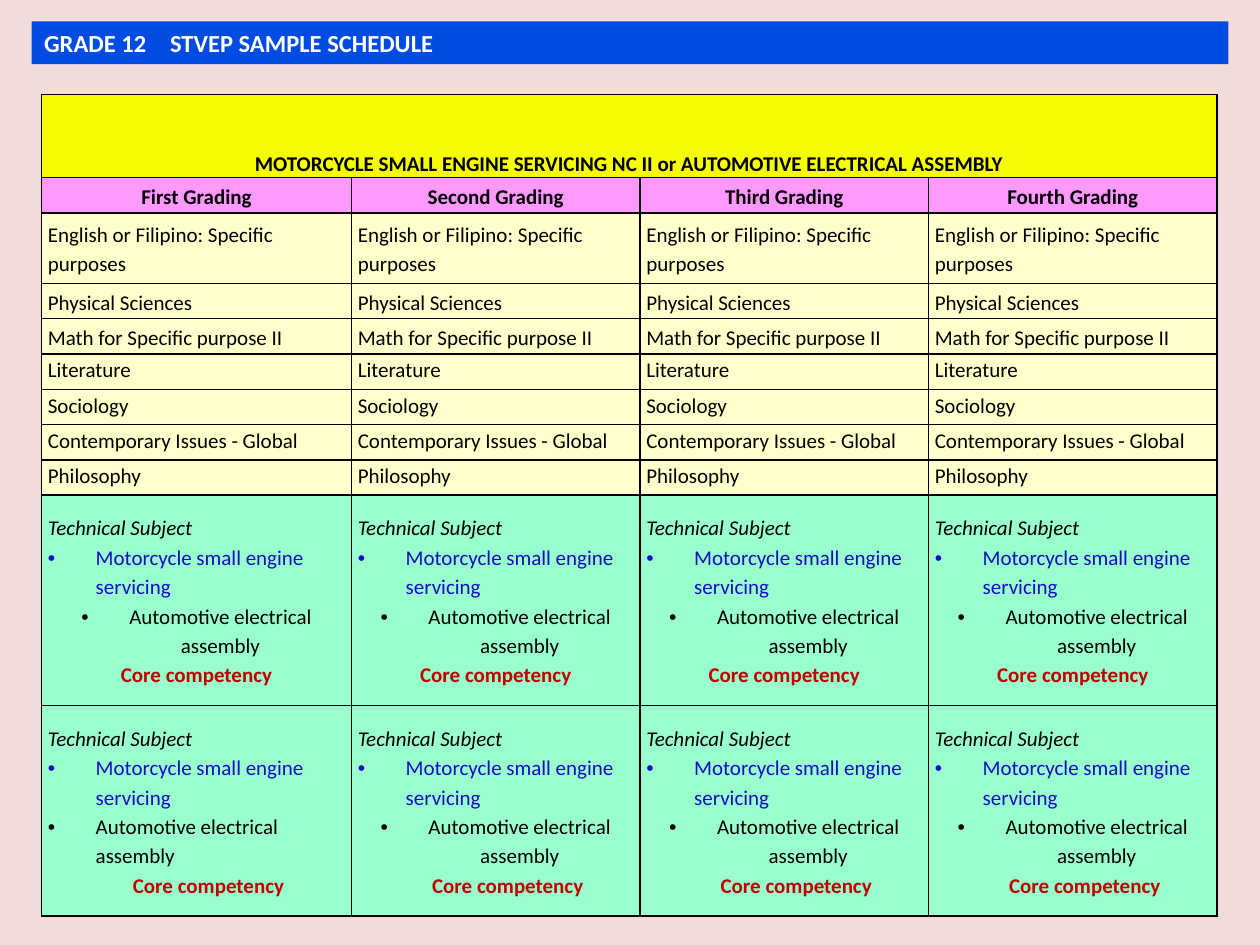
from dataclasses import dataclass

from lxml import etree
from pptx import Presentation
from pptx.dml.color import RGBColor
from pptx.enum.text import MSO_ANCHOR, MSO_AUTO_SIZE, PP_ALIGN
from pptx.oxml.ns import qn
from pptx.util import Inches, Pt

LEFT, CENTER = PP_ALIGN.LEFT, PP_ALIGN.CENTER
TOP, MIDDLE, BOTTOM = MSO_ANCHOR.TOP, MSO_ANCHOR.MIDDLE, MSO_ANCHOR.BOTTOM
NO_AUTOFIT = MSO_AUTO_SIZE.NONE

FONT = "Calibri"
BLACK, WHITE, BLUE, RED = "000000", "FFFFFF", "180BC5", "C00000"
PINK_BACKDROP, BANNER_BLUE = "F2DCDB", "004BE2"
YELLOW, PINK, CREAM, MINT = "F6FC04", "FF99FF", "FFFFCC", "99FFCC"
BORDER_SIDES = ("a:lnL", "a:lnR", "a:lnT", "a:lnB")
COLUMN_WIDTHS = (2.46, 2.29, 2.29, 2.29)
LINE_HEIGHT = 0.28
TECHNICAL_HEIGHT = 1.67
BULLET_INDENT = 0.38
CORE_INDENT = 0.19


@dataclass(frozen=True)
class Line:
    text: str
    color: str = BLACK
    bold: bool = False
    italic: bool = False
    align: PP_ALIGN = LEFT
    after: float = 0
    margin: float = 0
    hanging: float = 0
    bullet: bool = False


@dataclass(frozen=True)
class Row:
    height: float
    fill: str
    anchor: MSO_ANCHOR
    cells: list[list[Line]]


def rgb(value: str) -> RGBColor:
    return RGBColor.from_string(value)


def apply(target: object, values: dict) -> None:
    for name, value in values.items():
        setattr(target, name, value)


def paint(fill, color: str) -> None:
    fill.solid()
    fill.fore_color.rgb = rgb(color)


def write_line(paragraph, line: Line, size: float = 12) -> None:
    apply(paragraph, {
        "alignment": line.align,
        "line_spacing": 1.15,
        "space_before": Pt(0),
        "space_after": Pt(line.after),
    })
    run = paragraph.add_run()
    run.text = line.text
    apply(run.font, {
        "name": FONT,
        "size": Pt(size),
        "bold": line.bold,
        "italic": line.italic,
    })
    run.font.color.rgb = rgb(line.color)
    properties = paragraph._p.get_or_add_pPr()
    properties.set("marL", str(Inches(line.margin)))
    properties.set("indent", str(-Inches(line.hanging)))
    if line.bullet:
        etree.SubElement(properties, qn("a:buFont")).set("typeface", "Arial")
        etree.SubElement(properties, qn("a:buChar")).set("char", "•")


def draw_borders(cell) -> None:
    properties = cell._tc.get_or_add_tcPr()
    for side in BORDER_SIDES:
        border = etree.SubElement(properties, qn(side), w=str(Pt(1)))
        solid = etree.SubElement(border, qn("a:solidFill"))
        etree.SubElement(solid, qn("a:srgbClr"), val=BLACK)


def fill_cell(cell, lines: list[Line], row: Row) -> None:
    apply(cell, {
        "vertical_anchor": row.anchor,
        "margin_left": Inches(0.05),
        "margin_right": Inches(0.05),
        "margin_top": 0,
        "margin_bottom": 0,
    })
    draw_borders(cell)
    paint(cell.fill, row.fill)
    frame = cell.text_frame
    for index, line in enumerate(lines):
        paragraph = frame.add_paragraph() if index else frame.paragraphs[0]
        write_line(paragraph, line)


def technical_lines(automotive_align: PP_ALIGN, core_margin: float, core_hanging: float) -> list[Line]:
    bullet = {"margin": BULLET_INDENT, "hanging": BULLET_INDENT, "bullet": True}
    return [
        Line("Technical Subject", italic=True),
        Line("Motorcycle small engine servicing", color=BLUE, **bullet),
        Line("Automotive electrical assembly", align=automotive_align, **bullet),
        Line("Core competency", color=RED, bold=True, align=CENTER,
             margin=core_margin, hanging=core_hanging),
    ]


def subject_row(subject: str, height: float, anchor: MSO_ANCHOR, after: float) -> Row:
    return Row(height, CREAM, anchor, [[Line(subject, after=after)]] * len(COLUMN_WIDTHS))


def schedule_rows() -> list[Row]:
    programme = Line("MOTORCYCLE SMALL ENGINE SERVICING NC II or AUTOMOTIVE ELECTRICAL ASSEMBLY",
                     bold=True, align=CENTER, after=6)
    gradings = [[Line(f"{order} Grading", bold=True, align=CENTER, after=12)]
                for order in ("First", "Second", "Third", "Fourth")]
    subjects = (
        ("English or Filipino: Specific purposes", 2 * LINE_HEIGHT, MIDDLE, 6),
        ("Physical Sciences", LINE_HEIGHT, MIDDLE, 6),
        ("Math for Specific purpose II", LINE_HEIGHT, MIDDLE, 6),
        ("Literature", LINE_HEIGHT, TOP, 0),
        ("Sociology", LINE_HEIGHT, TOP, 0),
        ("Contemporary Issues - Global", LINE_HEIGHT, TOP, 0),
        ("Philosophy", LINE_HEIGHT, TOP, 6),
    )
    upper = [technical_lines(CENTER, BULLET_INDENT, BULLET_INDENT)] * 4
    lower = [technical_lines(align, CORE_INDENT, 0) for align in (LEFT, CENTER, CENTER, CENTER)]
    return [
        Row(0.66, YELLOW, BOTTOM, [[programme], [], [], []]),
        Row(LINE_HEIGHT, PINK, MIDDLE, gradings),
        *(subject_row(*subject) for subject in subjects),
        Row(TECHNICAL_HEIGHT, MINT, MIDDLE, upper),
        Row(TECHNICAL_HEIGHT, MINT, MIDDLE, lower),
    ]


def draw_schedule(slide, rows: list[Row]) -> None:
    frame = slide.shapes.add_table(
        len(rows), len(COLUMN_WIDTHS), Inches(0.33), Inches(0.75),
        Inches(sum(COLUMN_WIDTHS)), Inches(sum(row.height for row in rows)))
    schedule = frame.table
    apply(schedule, {"first_row": False, "horz_banding": False})
    for column, width in zip(schedule.columns, COLUMN_WIDTHS):
        column.width = Inches(width)
    for row_index, row in enumerate(rows):
        schedule.rows[row_index].height = Inches(row.height)
        for column_index, lines in enumerate(row.cells):
            fill_cell(schedule.cell(row_index, column_index), lines, row)
    schedule.cell(0, 0).merge(schedule.cell(0, len(COLUMN_WIDTHS) - 1))


def draw_banner(slide) -> None:
    banner = slide.shapes.title
    apply(banner, {
        "left": Inches(0.25),
        "top": Inches(0.17),
        "width": Inches(9.5),
        "height": Inches(0.34),
    })
    paint(banner.fill, BANNER_BLUE)
    apply(banner.text_frame, {
        "vertical_anchor": MIDDLE,
        "word_wrap": True,
        "auto_size": NO_AUTOFIT,
    })
    heading = banner.text_frame.paragraphs[0]
    write_line(heading, Line("GRADE 12\tSTVEP SAMPLE SCHEDULE", color=WHITE, bold=True), 14)
    heading.line_spacing = 1.0
    tabs = etree.SubElement(heading._p.get_or_add_pPr(), qn("a:tabLst"))
    etree.SubElement(tabs, qn("a:tab"), pos=str(Inches(3.53)), algn="l")


def main() -> None:
    presentation = Presentation()
    apply(presentation, {"slide_width": Inches(10), "slide_height": Inches(7.5)})
    slide = presentation.slides.add_slide(presentation.slide_layouts.get_by_name("Title Only"))
    paint(slide.background.fill, PINK_BACKDROP)
    draw_banner(slide)
    draw_schedule(slide, schedule_rows())
    presentation.save("out.pptx")


if __name__ == "__main__":
    main()
